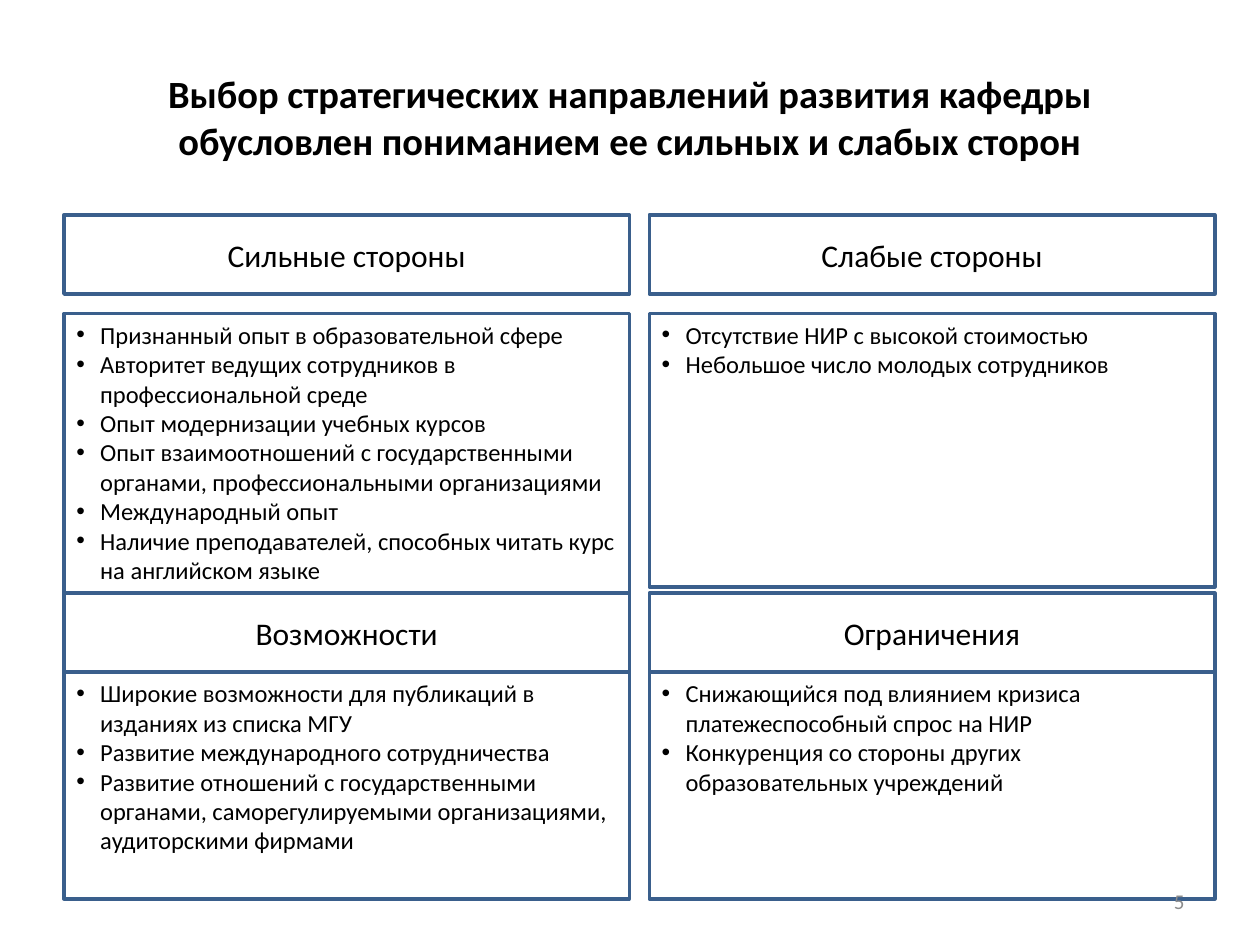
from pptx import Presentation
from pptx.dml.color import RGBColor
from pptx.enum.shapes import MSO_SHAPE
from pptx.enum.text import MSO_ANCHOR, PP_ALIGN
from pptx.oxml.ns import qn
from pptx.util import Cm, Pt
from lxml import etree

RECTANGLE = MSO_SHAPE.RECTANGLE
TOP, MIDDLE = MSO_ANCHOR.TOP, MSO_ANCHOR.MIDDLE
LEFT, CENTER, RIGHT = PP_ALIGN.LEFT, PP_ALIGN.CENTER, PP_ALIGN.RIGHT

FONT = "Calibri"
BLACK, WHITE, BLUE, GRAY = "000000", "FFFFFF", "3A5F8C", "8C8C8C"

TITLE = "Выбор стратегических направлений развития кафедры обусловлен пониманием ее сильных и слабых сторон"
PAGE_NUMBER = "5"

QUADRANTS = [
    {"row": 0, "column": 0, "heading": "Сильные стороны", "body_height": 6.25, "points": [
        "Признанный опыт в образовательной сфере",
        "Авторитет ведущих сотрудников в профессиональной среде",
        "Опыт модернизации учебных курсов",
        "Опыт взаимоотношений с государственными органами, профессиональными организациями",
        "Международный опыт",
        "Наличие преподавателей, способных читать курс на английском языке",
    ]},
    {"row": 0, "column": 1, "heading": "Слабые стороны", "body_height": 5.51, "points": [
        "Отсутствие НИР с высокой стоимостью",
        "Небольшое число молодых сотрудников",
    ]},
    {"row": 1, "column": 0, "heading": "Возможности", "body_height": 4.57, "points": [
        "Широкие возможности для публикаций в изданиях из списка МГУ",
        "Развитие международного сотрудничества",
        "Развитие отношений с государственными органами, саморегулируемыми организациями, аудиторскими фирмами",
    ]},
    {"row": 1, "column": 1, "heading": "Ограничения", "body_height": 4.57, "points": [
        "Снижающийся под влиянием кризиса платежеспособный спрос на НИР",
        "Конкуренция со стороны других образовательных учреждений",
    ]},
]

COLUMN_LEFTS = [1.29, 13.09]
HEADING_TOPS = [4.33, 11.96]
BODY_TOPS = [6.32, 13.55]
BOX_WIDTH, HEADING_HEIGHT = 11.4, 1.6
BULLET_INDENT = Cm(0.48)


def color(value):
    return RGBColor.from_string(value)


def write(shape, lines, size, align, anchor, text_color=BLACK, bold=False):
    frame = shape.text_frame
    frame.word_wrap = True
    frame.vertical_anchor = anchor
    frame.text = "\n".join(lines)
    for paragraph in frame.paragraphs:
        paragraph.alignment = align
        paragraph.font.name = FONT
        paragraph.font.size = Pt(size)
        paragraph.font.bold = bold
        paragraph.font.color.rgb = color(text_color)


def add_bullets(shape):
    for paragraph in shape.text_frame.paragraphs:
        properties = paragraph._p.get_or_add_pPr()
        properties.set("marL", str(BULLET_INDENT))
        properties.set("indent", str(-BULLET_INDENT))
        font = etree.Element(qn("a:buFont"), typeface="Arial")
        bullet = etree.Element(qn("a:buChar"), char="•")
        properties.insert_element_before(font, "a:defRPr")
        properties.insert_element_before(bullet, "a:defRPr")


def add_box(slide, left, top, height):
    shape = slide.shapes.add_shape(RECTANGLE, Cm(left), Cm(top), Cm(BOX_WIDTH), Cm(height))
    shape.shadow.inherit = False
    shape.fill.solid()
    shape.fill.fore_color.rgb = color(WHITE)
    shape.line.color.rgb = color(BLUE)
    shape.line.width = Pt(2)
    return shape


def add_quadrant(slide, quadrant):
    left = COLUMN_LEFTS[quadrant["column"]]
    row = quadrant["row"]
    heading = add_box(slide, left, HEADING_TOPS[row], HEADING_HEIGHT)
    write(heading, [quadrant["heading"]], 18, CENTER, MIDDLE)
    body = add_box(slide, left, BODY_TOPS[row], quadrant["body_height"])
    write(body, quadrant["points"], 14, LEFT, TOP)
    add_bullets(body)


def main():
    presentation = Presentation()
    presentation.slide_width, presentation.slide_height = Cm(25.4), Cm(19.05)
    slide = presentation.slides.add_slide(presentation.slide_layouts[6])

    title = slide.shapes.add_textbox(Cm(1.27), Cm(0.76), Cm(22.86), Cm(3.18))
    write(title, [TITLE], 22, CENTER, MIDDLE, bold=True)
    for quadrant in QUADRANTS:
        add_quadrant(slide, quadrant)
    number = slide.shapes.add_textbox(Cm(18.2), Cm(17.66), Cm(5.93), Cm(1.01))
    write(number, [PAGE_NUMBER], 12, RIGHT, MIDDLE, GRAY)

    presentation.save("out.pptx")


if __name__ == "__main__":
    main()
